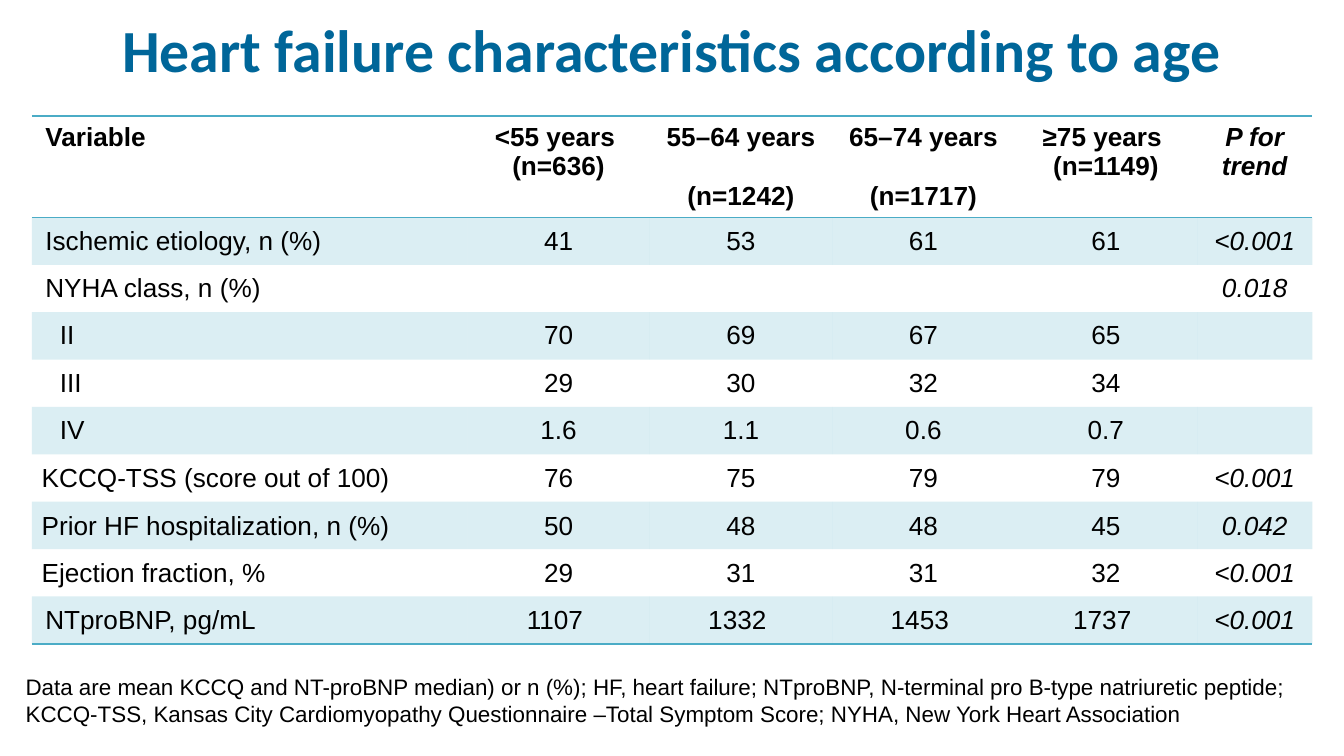
from copy import deepcopy
from lxml.etree import SubElement
from pptx import Presentation
from pptx.dml.color import RGBColor
from pptx.enum.text import MSO_ANCHOR, MSO_AUTO_SIZE, PP_ALIGN
from pptx.oxml import parse_xml
from pptx.oxml.ns import nsdecls, qn
from pptx.util import Pt

PX = 2286
BLUE = RGBColor(0x00, 0x66, 0x99)
TEAL = RGBColor(0x4B, 0xAC, 0xC6)
BLACK = RGBColor(0x00, 0x00, 0x00)
PLAIN = "{2D5ABB26-0587-4C30-8999-92F81FD0307C}"

TITLE = "Heart failure characteristics according to age"
NOTE = (
    "Data are mean KCCQ and NT-proBNP median) or n (%); HF, heart failure; "
    "NTproBNP, N-terminal pro B-type natriuretic peptide; "
    "KCCQ-TSS, Kansas City Cardiomyopathy Questionnaire –Total Symptom Score; "
    "NYHA, New York Heart Association"
)
COLS = [1296, 543, 543, 543, 543, 343]
HEAD, ROW = 264, 141
DATA = [
    ["Variable", "<55 years \v(n=636)", "55–64 years \v(n=1242)",
     "65–74 years \v(n=1717)", "≥75 years \v(n=1149)", "P for trend"],
    ["Ischemic etiology, n (%)", "41", "53", "61", "61", "<0.001"],
    ["NYHA class, n (%)", "", "", "", "", "0.018"],
    ["  II", "70", "69", "67", "65", ""],
    ["  III", "29", "30", "32", "34", ""],
    ["  IV", "1.6", "1.1", "0.6", "0.7", ""],
    ["KCCQ-TSS (score out of 100)", "76", "75", "79", "79", "<0.001"],
    ["Prior HF hospitalization, n (%)", "50", "48", "48", "45", "0.042"],
    ["Ejection fraction, %", "29", "31", "31", "32", "<0.001"],
    ["NTproBNP, pg/mL", "1107 ", "1332 ", "1453 ", "1737 ", "<0.001"],
]
TIGHT = range(6, 9)


def scale(*sizes):
    return [size * PX for size in sizes]


def write(frame, text, size=14, face="Arial", color=BLACK, bold=False,
          slant=False, align=PP_ALIGN.LEFT, space=None):
    para = frame.paragraphs[0]
    para.text = text
    para.alignment = align
    para.line_spacing = space
    for run in para.runs:
        font = run.font
        font.size, font.name = Pt(size), face
        font.bold, font.italic = bold, slant
        font.color.rgb = color
    for gap in para._p.findall(qn("a:br")):
        gap.append(deepcopy(para.runs[0]._r.rPr))
    if not text:
        para._p.get_or_add_endParaRPr().set("sz", str(size * 100))


def rule(cell, side):
    line = parse_xml(
        f'<a:{side} {nsdecls("a")} w="12700"><a:solidFill>'
        f'<a:srgbClr val="{TEAL}"/></a:solidFill></a:{side}>'
    )
    cell._tc.get_or_add_tcPr().insert(0, line)


def tint(cell):
    cell.fill.solid()
    cell.fill.fore_color.rgb = TEAL
    shade = cell._tc.tcPr.find(".//" + qn("a:srgbClr"))
    SubElement(shade, qn("a:alpha")).set("val", "20000")


def fill_cell(cell, text, row, col):
    if row % 2:
        tint(cell)
    else:
        cell.fill.background()
    if row in (0, len(DATA) - 1):
        rule(cell, "lnB")
    if row == 0:
        rule(cell, "lnT")
    else:
        cell.vertical_anchor = MSO_ANCHOR.MIDDLE
    if row in TIGHT:
        cell.margin_left, cell.margin_right = scale(29, 29)
        cell.margin_top = cell.margin_bottom = 0
    write(cell.text_frame, text, bold=row == 0, slant=col == len(COLS) - 1,
          align=PP_ALIGN.CENTER if col else PP_ALIGN.LEFT,
          space=1.06 if row in TIGHT else None)


def add_title(slide, box):
    title = slide.shapes.title
    title.left, title.top, title.width, title.height = scale(*box)
    frame = title.text_frame
    frame.vertical_anchor = MSO_ANCHOR.MIDDLE
    write(frame, TITLE, size=32, face="Calibri", color=BLUE, bold=True,
          align=PP_ALIGN.CENTER)


def add_grid(slide, box):
    grid = slide.shapes.add_table(len(DATA), len(COLS), *scale(*box)).table
    grid.first_row = grid.horz_banding = False
    grid._tbl.tblPr.find(qn("a:tableStyleId")).text = PLAIN
    for col, width in zip(grid.columns, scale(*COLS)):
        col.width = width
    for num, row in enumerate(grid.rows):
        row.height = (ROW if num else HEAD) * PX
        for col, cell in enumerate(row.cells):
            fill_cell(cell, DATA[num][col], num, col)


def add_note(slide, box):
    frame = slide.shapes.add_textbox(*scale(*box)).text_frame
    frame.word_wrap = True
    frame.auto_size = MSO_AUTO_SIZE.SHAPE_TO_FIT_TEXT
    write(frame, NOTE, size=12)


def main():
    deck = Presentation()
    deck.slide_width, deck.slide_height = scale(4000, 2250)
    slide = deck.slides.add_slide(deck.slide_layouts[5])
    add_title(slide, (0, 20, 4000, 248))
    add_grid(slide, (95, 345, sum(COLS), HEAD + ROW * (len(DATA) - 1)))
    add_note(slide, (37, 1984, 4000, 200))
    deck.save("out.pptx")


if __name__ == "__main__":
    main()
